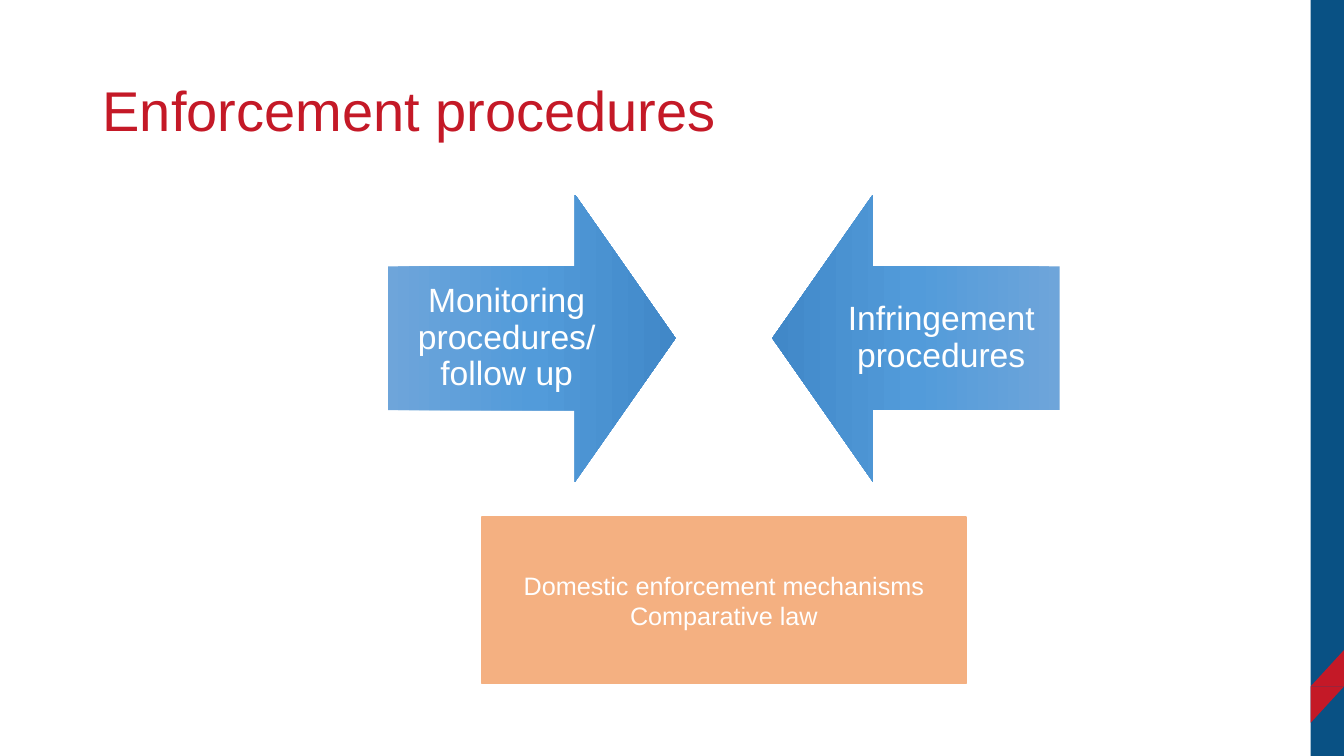
"""Build the enforcement procedures slide with two facing arrows."""
from copy import deepcopy

from pptx import Presentation
from pptx.dml.color import RGBColor
from pptx.enum.shapes import MSO_SHAPE
from pptx.enum.text import MSO_ANCHOR, PP_ALIGN
from pptx.oxml.ns import qn
from pptx.util import Inches, Pt

WIDTH, HEIGHT = 13.33, 7.5
BLUE, RED, ORANGE, WHITE = "095184", "C41927", "F4B081", "FFFFFF"
TITLE = "Enforcement procedures"
ARROW_SIZE, ARROW_TOP = 2.85, 1.93
LABEL_WIDTH, LABEL_HEIGHT = 2.35, 1.43
GRADIENT = [(0, "6EA5DA"), (0.5, "529BDA"), (1, "4188C8")]
ARROWS = [
    {"text": "Monitoring procedures/ follow up", "left": 3.85, "rotation": 270, "label_offset": 0},
    {"text": "Infringement procedures", "left": 7.66, "rotation": 90,
     "label_offset": ARROW_SIZE - LABEL_WIDTH},
]
BASIS = ["Domestic enforcement mechanisms", "Comparative law"]
BAND_LEFT, BAND_WIDTH = 13, 0.33
STRIPE_TOP, STRIPE_HEIGHT = 6.45, 0.36
STRIPE_ROTATIONS = [0, 180]


def color(value):
    return RGBColor.from_string(value)


def add_shape(kind, left, top, width, height, fill=None):
    shape = slide.shapes.add_shape(kind, Inches(left), Inches(top), Inches(width), Inches(height))
    shape.shadow.inherit = False
    shape.line.fill.background()
    if fill:
        shape.fill.solid()
        shape.fill.fore_color.rgb = color(fill)
    return shape


def add_text_box(left, top, width, height):
    return slide.shapes.add_textbox(Inches(left), Inches(top), Inches(width), Inches(height))


def write(shape, lines, size, text_color, align, spacing, inset_x=0.1, inset_y=0.05):
    frame = shape.text_frame
    frame.word_wrap = True
    frame.vertical_anchor = MSO_ANCHOR.MIDDLE
    frame.margin_left = frame.margin_right = Inches(inset_x)
    frame.margin_top = frame.margin_bottom = Inches(inset_y)
    for index, line in enumerate(lines):
        paragraph = frame.add_paragraph() if index else frame.paragraphs[0]
        paragraph.alignment = align
        paragraph.line_spacing = spacing
        run = paragraph.add_run()
        run.text = line
        run.font.name = "Arial"
        run.font.size = Pt(size)
        run.font.color.rgb = color(text_color)


def fill_gradient(shape):
    shape.fill.gradient()
    shape.fill.gradient_angle = 270
    stop_list = shape._element.spPr.find(qn("a:gradFill")).find(qn("a:gsLst"))
    stop_list.insert(1, deepcopy(stop_list[0]))
    for stop, (position, value) in zip(shape.fill.gradient_stops, GRADIENT):
        stop.position = position
        stop.color.rgb = color(value)


presentation = Presentation()
presentation.slide_width = Inches(WIDTH)
presentation.slide_height = Inches(HEIGHT)
slide = presentation.slides.add_slide(presentation.slide_layouts[6])

add_shape(MSO_SHAPE.RECTANGLE, BAND_LEFT, 0, BAND_WIDTH, HEIGHT, BLUE)
for index, rotation in enumerate(STRIPE_ROTATIONS):
    triangle = add_shape(MSO_SHAPE.RIGHT_TRIANGLE, BAND_LEFT, STRIPE_TOP + index * STRIPE_HEIGHT,
                         BAND_WIDTH, STRIPE_HEIGHT, RED)
    triangle.rotation = rotation
    triangle._element.spPr.find(qn("a:xfrm")).set("flipH", "1")

write(add_text_box(0.92, 0.4, 11.5, 1.45), [TITLE], 40, RED, PP_ALIGN.LEFT, 0.9)

label_top = ARROW_TOP + (ARROW_SIZE - LABEL_HEIGHT) / 2
for item in ARROWS:
    arrow = add_shape(MSO_SHAPE.DOWN_ARROW, item["left"], ARROW_TOP, ARROW_SIZE, ARROW_SIZE)
    arrow.rotation = item["rotation"]
    arrow.adjustments[0] = 0.5
    arrow.adjustments[1] = 0.35
    fill_gradient(arrow)
    label = add_text_box(item["left"] + item["label_offset"], label_top, LABEL_WIDTH, LABEL_HEIGHT)
    write(label, [item["text"]], 24, WHITE, PP_ALIGN.CENTER, 0.9, 0.19, 0.19)

basis_box = add_shape(MSO_SHAPE.RECTANGLE, 4.78, 5.13, 4.8, 1.65, ORANGE)
basis_box.line.color.rgb = color(ORANGE)
basis_box.line.width = Pt(1)
write(basis_box, BASIS, 18, WHITE, PP_ALIGN.CENTER, 1.0)

presentation.save("out.pptx")
